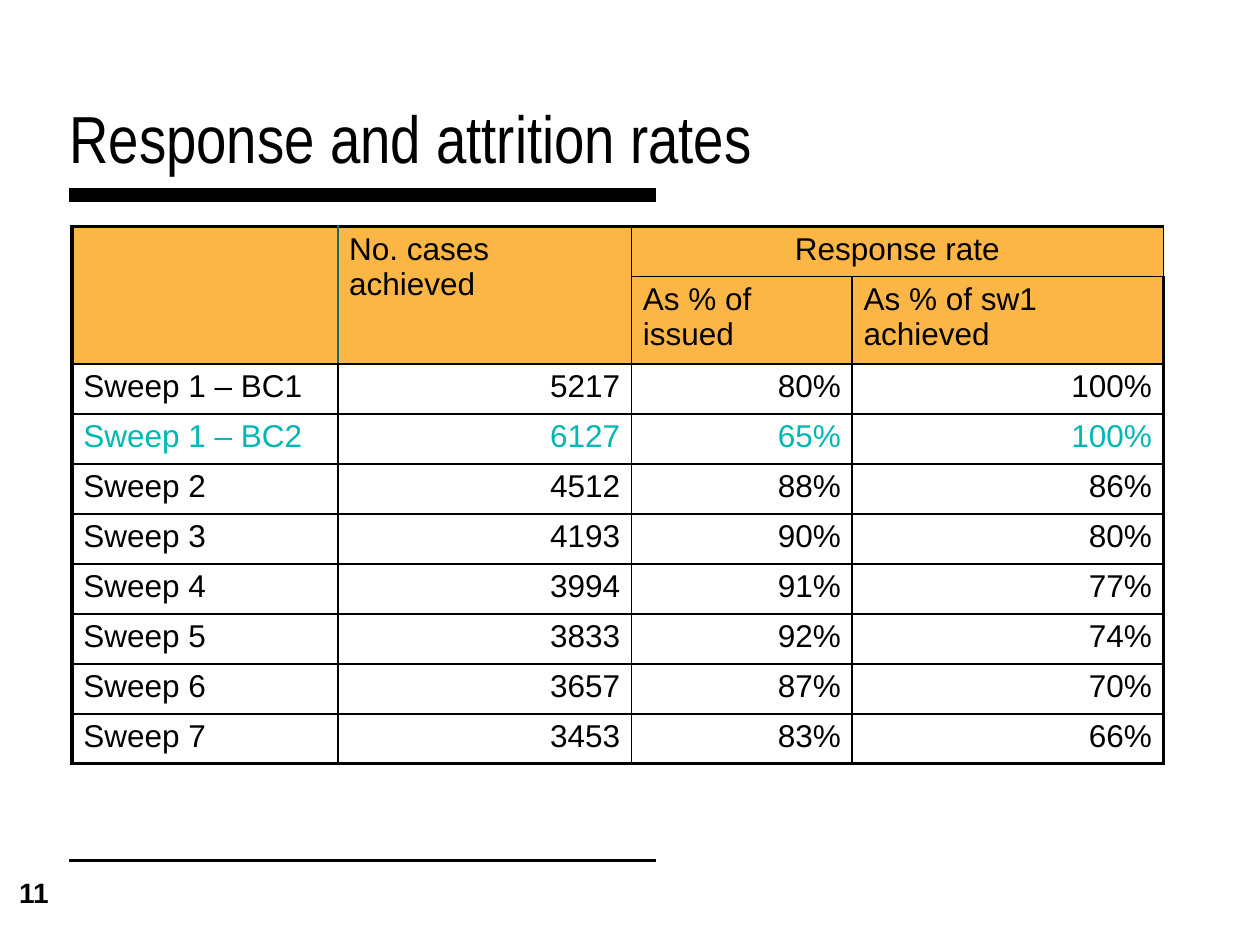
from dataclasses import dataclass

from lxml.etree import SubElement
from pptx import Presentation
from pptx.dml.color import RGBColor
from pptx.enum.shapes import MSO_CONNECTOR as Connector
from pptx.enum.text import MSO_ANCHOR as Anchor, PP_ALIGN as Align
from pptx.oxml.ns import qn
from pptx.util import Cm, Pt


@dataclass(frozen=True)
class Theme:
    ink: str = "000000"
    accent: str = "00B7B4"
    header: str = "FCB645"
    divider: str = "156B66"
    body_font: str = "Arial"
    title_font: str = "Arial Narrow"
    title_size: float = 38
    body_size: float = 18
    number_size: float = 16
    thin: float = 1
    thick: float = 2.25


THEME = Theme()
COL_WIDTHS = (5.36, 5.92, 4.45, 6.27)
ROW_HEIGHT = 1
HEADER_ROWS = 2
HEADERS = (
    (0, 1, "No. cases achieved", Align.LEFT),
    (0, 2, "Response rate", Align.CENTER),
    (1, 2, "As % of issued", Align.LEFT),
    (1, 3, "As % of sw1 achieved", Align.LEFT),
)
MERGES = ((0, 0, 1, 0), (0, 1, 1, 1), (0, 2, 0, 3))
SWEEPS = (
    ("Sweep 1 – BC1", "5217", "80%", "100%"),
    ("Sweep 1 – BC2", "6127", "65%", "100%"),
    ("Sweep 2", "4512", "88%", "86%"),
    ("Sweep 3", "4193", "90%", "80%"),
    ("Sweep 4", "3994", "91%", "77%"),
    ("Sweep 5", "3833", "92%", "74%"),
    ("Sweep 6", "3657", "87%", "70%"),
    ("Sweep 7", "3453", "83%", "66%"),
)
HIGHLIGHT = "Sweep 1 – BC2"


def write(tf, text, size=THEME.body_size, font=THEME.body_font, color=THEME.ink,
          bold=False, align=Align.LEFT, line_spacing=None, space_after=None):
    p = tf.paragraphs[0]
    p.alignment = align
    if line_spacing is not None:
        p.line_spacing = line_spacing
    if space_after is not None:
        p.space_after = Pt(space_after)
    r = p.add_run()
    r.text = text
    r.font.size, r.font.name, r.font.bold = Pt(size), font, bold
    r.font.color.rgb = RGBColor.from_string(color)


def add_text(s, text, left, top, width, height, anchor=Anchor.TOP, **fmt):
    tf = s.shapes.add_textbox(Cm(left), Cm(top), Cm(width), Cm(height)).text_frame
    tf.word_wrap = True
    tf.vertical_anchor = anchor
    tf.margin_left = tf.margin_right = tf.margin_top = tf.margin_bottom = 0
    write(tf, text, **fmt)


def add_rule(s, top, weight):
    line = s.shapes.add_connector(Connector.STRAIGHT, Cm(1.4), Cm(top), Cm(13.23), Cm(top))
    line.line.color.rgb = RGBColor.from_string(THEME.ink)
    line.line.width = Pt(weight)
    SubElement(line.element.spPr, qn("a:effectLst"))


def set_border(cell, side, color, weight):
    ln = SubElement(cell._tc.get_or_add_tcPr(), qn(f"a:ln{side}"), w=str(Pt(weight)))
    fill = SubElement(ln, qn("a:solidFill"))
    SubElement(fill, qn("a:srgbClr"), val=color)


def style_cell(cell, row, col, last_row, last_col):
    cell.margin_left = cell.margin_right = Cm(0.23)
    cell.margin_top = cell.margin_bottom = Cm(0.13)
    is_header = row < HEADER_ROWS
    outer = {"L": col == 0, "R": col == last_col, "T": row == 0, "B": row == last_row}
    for side, is_outer in outer.items():
        on_divider = is_header and (col, side) in ((0, "R"), (1, "L"))
        set_border(cell, side, THEME.divider if on_divider else THEME.ink,
                   THEME.thick if is_outer else THEME.thin)
    if is_header:
        cell.fill.solid()
        cell.fill.fore_color.rgb = RGBColor.from_string(THEME.header)
    else:
        cell.fill.background()


def write_cell(cell, text, **fmt):
    write(cell.text_frame, text, line_spacing=0.98, space_after=9, **fmt)


def add_rates_table(s):
    rows, cols = HEADER_ROWS + len(SWEEPS), len(COL_WIDTHS)
    table = s.shapes.add_table(rows, cols, Cm(1.45), Cm(4.57), Cm(sum(COL_WIDTHS)),
                               Cm(rows * ROW_HEIGHT)).table
    table.first_row = table.horz_banding = False
    for column, width in zip(table.columns, COL_WIDTHS):
        column.width = Cm(width)
    for row in range(rows):
        table.rows[row].height = Cm(ROW_HEIGHT)
        for col in range(cols):
            style_cell(table.cell(row, col), row, col, rows - 1, cols - 1)
    for top, left, bottom, right in MERGES:
        table.cell(top, left).merge(table.cell(bottom, right))
    for row, col, text, align in HEADERS:
        write_cell(table.cell(row, col), text, align=align)
    for row, sweep in enumerate(SWEEPS, HEADER_ROWS):
        color = THEME.accent if sweep[0] == HIGHLIGHT else THEME.ink
        for col, text in enumerate(sweep):
            write_cell(table.cell(row, col), text, color=color,
                       align=Align.RIGHT if col else Align.LEFT)


def main():
    prs = Presentation()
    prs.slide_width, prs.slide_height = Cm(25.4), Cm(19.05)
    s = prs.slides.add_slide(prs.slide_layouts[6])
    add_rule(s, 3.94, weight=8)
    add_rule(s, 17.35, weight=2)
    add_text(s, "11", 0.1, 17.65, 1.17, 0.69, size=THEME.number_size, bold=True,
             align=Align.CENTER)
    add_text(s, "Response and attrition rates", 1.4, 1.27, 17.88, 2.29,
             anchor=Anchor.BOTTOM, size=THEME.title_size, font=THEME.title_font)
    add_rates_table(s)
    prs.save("out.pptx")


if __name__ == "__main__":
    main()
